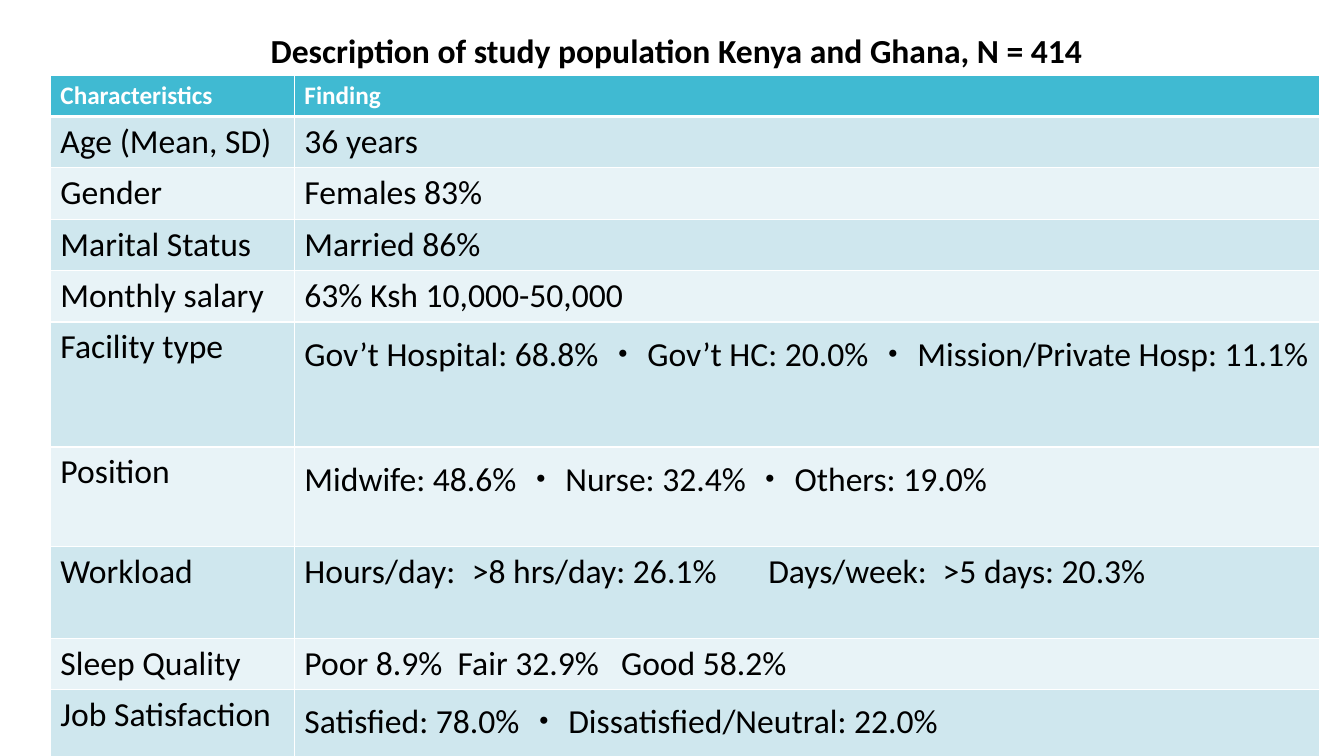
import pptx
import pptx.util
import pptx.dml.color
import pptx.enum.text
import pptx.oxml
import pptx.oxml.ns
from lxml import etree

Inches = pptx.util.Inches
Pt = pptx.util.Pt
RGBColor = pptx.dml.color.RGBColor
qn = pptx.oxml.ns.qn

BLACK = RGBColor(0x00, 0x00, 0x00)
WHITE = RGBColor(0xFF, 0xFF, 0xFF)
TEAL = RGBColor(0x40, 0xBA, 0xD2)
BANDS = [RGBColor(0xCF, 0xE7, 0xEE), RGBColor(0xE8, 0xF3, 0xF7)]

HEAD = ("Characteristics", "Finding")
# label, finding, row height, tab stops
ROWS = [
    ("Age (Mean, SD)", "36 years", 0.51, ()),
    ("Gender", "Females 83%", 0.51, ()),
    ("Marital Status", "Married 86%", 0.51, ()),
    ("Monthly salary", "63% Ksh 10,000-50,000", 0.51, ()),
    ("Facility type",
     "Gov’t Hospital: 68.8% ・ Gov’t HC: 20.0% ・ Mission/Private Hosp: 11.1%",
     1.24, ()),
    ("Position", "Midwife: 48.6% ・ Nurse: 32.4% ・ Others: 19.0%", 0.99, ()),
    ("Workload", "Hours/day:\t>8 hrs/day: 26.1%\tDays/week:\t>5 days: 20.3%",
     0.91, (1.66, 4.6, 6.33)),
    ("Sleep Quality", "Poor 8.9%\tFair 32.9%\tGood 58.2%", 0.51, (1.52, 3.14)),
    ("Job Satisfaction", "Satisfied: 78.0% ・ Dissatisfied/Neutral: 22.0%",
     0.66, ()),
]


def write(frame, text, size=24, color=BLACK, bold=False, align=None, tabs=()):
    para = frame.paragraphs[0]
    if align is not None:
        para.alignment = align
    if tabs:
        stops = etree.SubElement(para._p.get_or_add_pPr(), qn("a:tabLst"))
        for stop in tabs:
            etree.SubElement(stops, qn("a:tab"), pos=str(Inches(stop)), algn="l")
    run = para.add_run()
    run.text = text
    run.font.name = "Calibri"
    run.font.size = Pt(size)
    run.font.bold = bold
    run.font.color.rgb = color


def edge(cell, **widths):
    """Draw white borders; widths in points by side, 1 by default."""
    props = cell._tc.get_or_add_tcPr()
    for side in "LRTB":
        line = etree.SubElement(props, qn("a:ln" + side),
                                w=str(Pt(widths.get(side, 1))))
        fill = etree.SubElement(line, qn("a:solidFill"))
        etree.SubElement(fill, qn("a:srgbClr"), val=str(WHITE))


class Page:
    def __init__(self, deck):
        self.slide = deck.slides.add_slide(deck.slide_layouts[6])

    def title(self, text, left, top, width, height):
        box = self.slide.shapes.add_textbox(
            Inches(left), Inches(top), Inches(width), Inches(height))
        frame = box.text_frame
        frame.word_wrap = True
        frame.auto_size = pptx.enum.text.MSO_AUTO_SIZE.SHAPE_TO_FIT_TEXT
        write(frame, text, bold=True, align=pptx.enum.text.PP_ALIGN.CENTER)

    def table(self, head, rows, left, top, widths):
        heights = [0.4] + [row[2] for row in rows]
        grid = self.slide.shapes.add_table(
            len(heights), len(widths), Inches(left), Inches(top),
            Inches(sum(widths)), Inches(sum(heights))).table
        for col, width in zip(grid.columns, widths):
            col.width = Inches(width)
        for row, height in zip(grid.rows, heights):
            row.height = Inches(height)
        for col, text in enumerate(head):
            self.cell(grid.cell(0, col), text, TEAL, {"B": 3},
                      size=18, color=WHITE, bold=True)
        for num, (label, finding, _, tabs) in enumerate(rows, 1):
            band = BANDS[(num - 1) % 2]
            rule = {"T": 3} if num == 1 else {}
            self.cell(grid.cell(num, 0), label, band, rule)
            self.cell(grid.cell(num, 1), finding, band, rule, tabs=tabs)

    def cell(self, cell, text, back, rule, **style):
        edge(cell, **rule)
        cell.fill.solid()
        cell.fill.fore_color.rgb = back
        write(cell.text_frame, text, **style)


def main():
    deck = pptx.Presentation()
    deck.slide_width = Inches(13.33)
    deck.slide_height = Inches(7.5)
    page = Page(deck)
    page.table(HEAD, ROWS, 0.5, 0.75, (2.42, 10.17))
    page.title("Description of study population Kenya and Ghana, N = 414",
               2.25, 0.25, 8.92, 0.5)
    deck.save("out.pptx")


if __name__ == "__main__":
    main()
